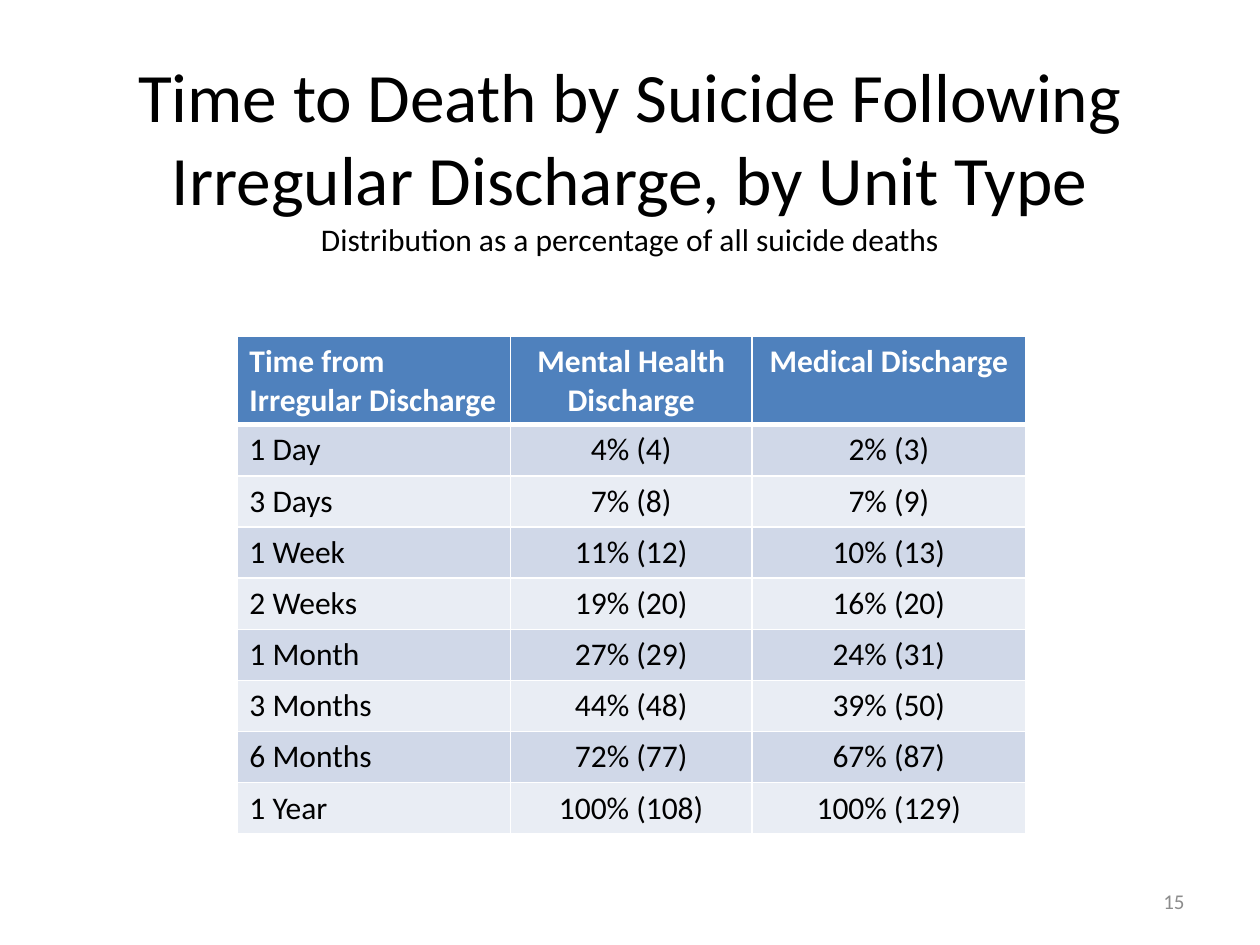
from lxml import etree
from pptx import Presentation
from pptx.dml.color import RGBColor
from pptx.enum.text import MSO_ANCHOR, PP_ALIGN
from pptx.oxml.ns import qn
from pptx.util import Inches, Pt

LEFT, CENTER, RIGHT = PP_ALIGN.LEFT, PP_ALIGN.CENTER, PP_ALIGN.RIGHT
MIDDLE = MSO_ANCHOR.MIDDLE

FONT = "Calibri"
BLACK, WHITE, GREY = "000000", "FFFFFF", "8C8C8C"
HEADER_FILL = "4F81BD"
BAND_FILLS = ["D0D8E8", "E9EDF4"]

TITLE = "Time to Death by Suicide Following Irregular Discharge, by Unit Type"
SUBTITLE = "Distribution as a percentage of all suicide deaths"
PAGE_NUMBER = "15"
ROWS = [
    ("Time from\nIrregular Discharge", "Mental Health Discharge", "Medical Discharge"),
    ("1 Day", "4% (4)", "2% (3)"),
    ("3 Days", "7% (8)", "7% (9)"),
    ("1 Week", "11% (12)", "10% (13)"),
    ("2 Weeks", "19% (20)", "16% (20)"),
    ("1 Month", "27% (29)", "24% (31)"),
    ("3 Months", "44% (48)", "39% (50)"),
    ("6 Months", "72% (77)", "67% (87)"),
    ("1 Year", "100% (108)", "100% (129)"),
]
COLUMN_WIDTHS = [2.17, 1.92, 2.17]
TABLE_LEFT, TABLE_TOP, TABLE_HEIGHT = 1.88, 2.67, 3.94
HEADER_HEIGHT = 0.69


def rgb(color):
    return RGBColor.from_string(color)


def style_run(run, size, color, bold=False):
    run.font.name = FONT
    run.font.size = Pt(size)
    run.font.bold = bold
    run.font.color.rgb = rgb(color)


def add_text(slide, text, box, align, sizes, color):
    frame = slide.shapes.add_textbox(*map(Inches, box)).text_frame
    frame.word_wrap = True
    frame.vertical_anchor = MIDDLE
    paragraph = frame.paragraphs[0]
    paragraph.text = text
    paragraph.alignment = align
    for run, size in zip(paragraph.runs, sizes):
        style_run(run, size, color)


def add_border(cell, side, width):
    line = etree.SubElement(cell._tc.get_or_add_tcPr(), qn(f"a:ln{side}"), w=str(Pt(width)))
    fill = etree.SubElement(line, qn("a:solidFill"))
    etree.SubElement(fill, qn("a:srgbClr"), val=WHITE)


def fill_cell(cell, text, row, column):
    is_header = row == 0
    cell.text_frame.text = text
    for paragraph in cell.text_frame.paragraphs:
        paragraph.alignment = CENTER if column else LEFT
        for run in paragraph.runs:
            style_run(run, 18, WHITE if is_header else BLACK, is_header)
    widths = {"L": 1, "R": 1, "T": 3 if row == 1 else 1, "B": 3 if is_header else 1}
    for side, width in widths.items():
        add_border(cell, side, width)
    cell.fill.solid()
    cell.fill.fore_color.rgb = rgb(HEADER_FILL if is_header else BAND_FILLS[(row - 1) % 2])


def add_discharge_table(slide):
    table = slide.shapes.add_table(
        len(ROWS), len(COLUMN_WIDTHS), Inches(TABLE_LEFT), Inches(TABLE_TOP),
        Inches(sum(COLUMN_WIDTHS)), Inches(TABLE_HEIGHT)).table
    for column, width in zip(table.columns, COLUMN_WIDTHS):
        column.width = Inches(width)
    body_height = (TABLE_HEIGHT - HEADER_HEIGHT) / (len(ROWS) - 1)
    for row, texts in enumerate(ROWS):
        table.rows[row].height = Inches(body_height if row else HEADER_HEIGHT)
        for column, text in enumerate(texts):
            fill_cell(table.cell(row, column), text, row, column)


def main():
    prs = Presentation()
    prs.slide_width, prs.slide_height = Inches(10), Inches(7.5)
    slide = prs.slides.add_slide(prs.slide_layouts[6])
    add_text(slide, f"{TITLE}\v{SUBTITLE}", (0.5, 0.3, 9, 1.87), CENTER, (39.6, 18), BLACK)
    add_discharge_table(slide)
    add_text(slide, PAGE_NUMBER, (7.17, 6.95, 2.33, 0.4), RIGHT, (12,), GREY)
    prs.save("out.pptx")


if __name__ == "__main__":
    main()
